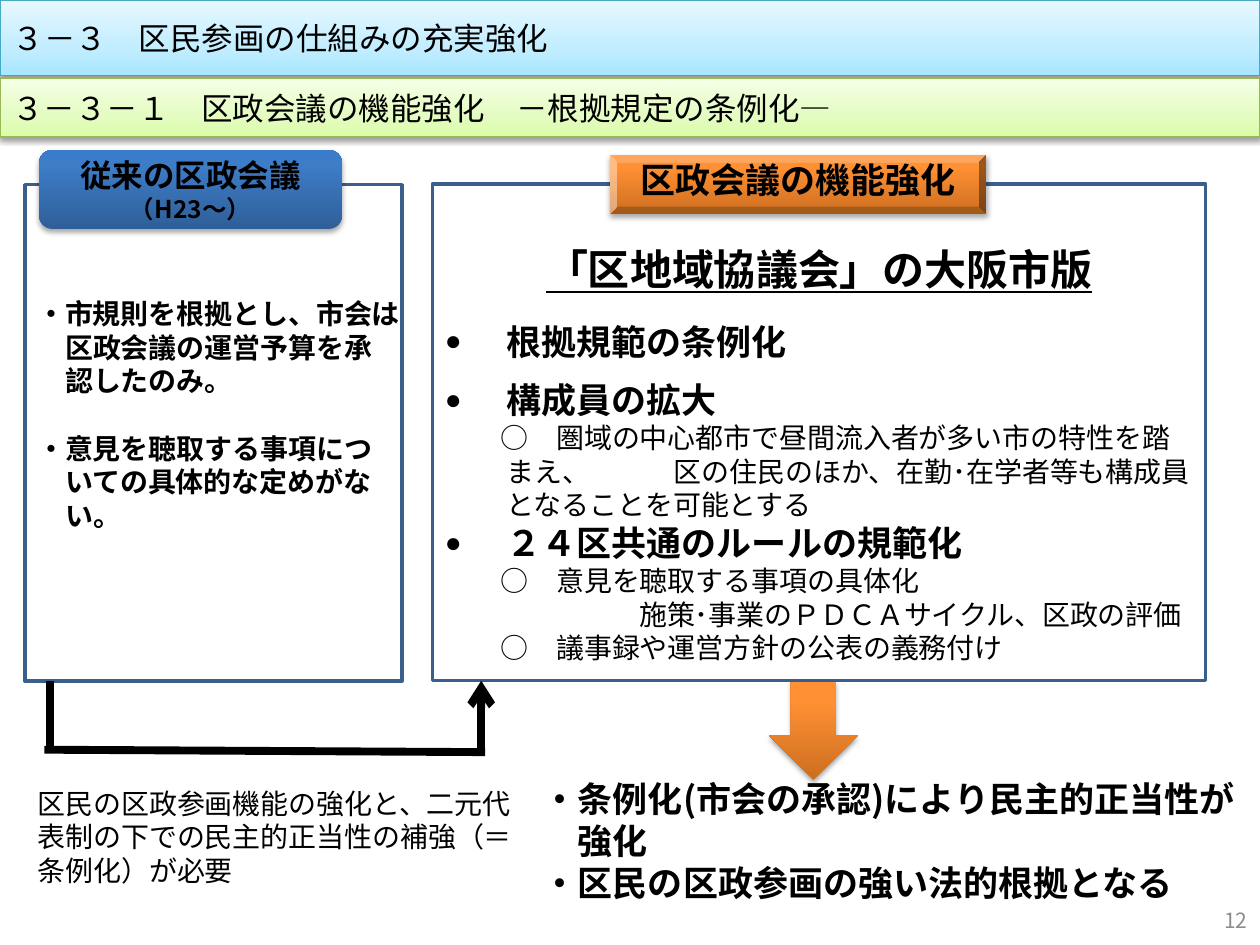
from lxml import etree
from pptx import Presentation
from pptx.dml.color import RGBColor
from pptx.enum.shapes import MSO_CONNECTOR, MSO_SHAPE
from pptx.enum.text import MSO_ANCHOR, MSO_AUTO_SIZE, PP_ALIGN
from pptx.oxml.ns import qn
from pptx.util import Pt

COLORS = {
    "text": "000000", "white": "FFFFFF", "number": "8C8C8C", "frame": "3A5F8C",
    "sky_line": "46AAC5", "lime_line": "98B955",
}
GRADIENTS = {
    "sky": [(0, "A7E6FF"), (35, "C1EDFF"), (100, "E7F8FF")],
    "lime": [(0, "DAFDA7"), (35, "E4FCC2"), (100, "F5FFE7")],
    "blue": [(0, "2F5F99"), (80, "3D7CC7"), (100, "3A7CCB")],
    "orange": [(0, "CC6E20"), (80, "FF9034"), (100, "FF9136")],
}
CJK = "Noto Sans CJK JP"


def rgb(name):
    return RGBColor.from_string(COLORS[name])


def child(parent, tag, **attrs):
    return etree.SubElement(parent, qn(tag), {k: str(v) for k, v in attrs.items()})


def place(sp, box):
    for name, value in zip(("left", "top", "width", "height"), box):
        setattr(sp, name, Pt(value))


def add_shape(s, kind, box):
    sp = s.shapes.add_shape(kind, *map(Pt, box))
    sp.shadow.inherit = False
    return sp


def set_line(sp, color=None, width=1):
    if color:
        sp.line.color.rgb = rgb(color)
        sp.line.width = Pt(width)
    else:
        sp.line.fill.background()


def paint(sp, gradient, line=None, alpha=35, distance=1.8):
    sp.fill.gradient()
    sp.fill.gradient_angle = 90
    spPr = sp._element.spPr
    stops = spPr.find(".//" + qn("a:gsLst"))
    for stop in list(stops):
        stops.remove(stop)
    for pos, color in GRADIENTS[gradient]:
        child(child(stops, "a:gs", pos=pos * 1000), "a:srgbClr", val=color)
    set_line(sp, line, 0.75)
    sp.shadow.inherit = False
    shadow = child(spPr.find(qn("a:effectLst")), "a:outerShdw", blurRad=Pt(3.1),
                   dist=Pt(distance), dir=5400000, rotWithShape=0)
    child(child(shadow, "a:srgbClr", val=COLORS["text"]), "a:alpha", val=alpha * 1000)


def frame_text(sp, anchor=MSO_ANCHOR.TOP, **margins):
    tf = sp.text_frame
    tf.word_wrap = True
    tf.auto_size = MSO_AUTO_SIZE.NONE
    tf.vertical_anchor = anchor
    for side, value in margins.items():
        setattr(tf, "margin_" + side, Pt(value))
    return tf


def write(tf, text, size, font="Calibri", color="text", bold=False, underline=False,
          align=PP_ALIGN.LEFT, before=0, left=0, first=0, bullet=None):
    p = tf.paragraphs[0]
    if p.runs:
        p = tf.add_paragraph()
    p.text = text
    formats = {"alignment": align, "space_before": Pt(before), "space_after": Pt(0),
               "line_spacing": Pt(size * 1.2)}
    for name, value in formats.items():
        setattr(p, name, value)
    pPr = p._p.get_or_add_pPr()
    pPr.set("marL", str(Pt(left)))
    pPr.set("indent", str(Pt(first)))
    if bullet:
        child(pPr, "a:buSzPct", val=80000)
        child(pPr, "a:buFont", typeface="Arial")
        child(pPr, "a:buChar", char=bullet)
    else:
        child(pPr, "a:buNone")
    for r in p.runs:
        for name, value in {"size": Pt(size), "name": font, "bold": bold,
                            "underline": underline}.items():
            setattr(r.font, name, value)
        r.font.color.rgb = rgb(color)
        if font == CJK:
            child(r._r.get_or_add_rPr(), "a:ea", typeface=font)


def header_band(sp, text, gradient, line):
    paint(sp, gradient, line, 38, 1.6)
    write(frame_text(sp, MSO_ANCHOR.MIDDLE), text, 18)


def outline(sp):
    sp.fill.solid()
    sp.fill.fore_color.rgb = rgb("white")
    set_line(sp, "frame", 2)


def current_panel(s, box):
    x, y, w, h = box
    panel = add_shape(s, MSO_SHAPE.RECTANGLE, box)
    outline(panel)
    tf = frame_text(panel, top=64, right=0)
    for text, before in (
        ("・市規則を根拠とし、市会は\v区政会議の運営予算を承\v認したのみ。", 0),
        ("・意見を聴取する事項につ\vいての具体的な定めがな\vい。", 19.2),
    ):
        write(tf, text, 16, bold=True, before=before, left=16, first=-16)
    label = add_shape(s, MSO_SHAPE.ROUNDED_RECTANGLE, (x + 8.2, y - 20, 173, 45.2))
    paint(label, "blue")
    tf = frame_text(label, MSO_ANCHOR.MIDDLE)
    for text, size in (("従来の区政会議", 18), ("（H23～）", 14)):
        write(tf, text, size, CJK, bold=True, align=PP_ALIGN.CENTER)


def reform_panel(s, panel, box):
    x, y, w, h = box
    place(panel, box)
    outline(panel)
    tf = frame_text(panel, top=34)
    heading = {"size": 20, "bold": True, "left": 35.3, "first": -35.3, "bullet": "●"}
    detail = {"size": 16, "left": 35.3, "first": -3.5}
    write(tf, "「区地域協議会」の大阪市版", 24, bold=True, underline=True,
          align=PP_ALIGN.CENTER)
    write(tf, "根拠規範の条例化", before=15, **heading)
    write(tf, "構成員の拡大", before=9.5, **heading)
    write(tf, "○　圏域の中心都市で昼間流入者が多い市の特性を踏まえ、　　　"
              "区の住民のほか、在勤･在学者等も構成員となることを可能とする", **detail)
    write(tf, "２４区共通のルールの規範化", **heading)
    write(tf, "○　意見を聴取する事項の具体化", **detail)
    write(tf, "施策･事業のＰＤＣＡサイクル、区政の評価", 16, left=111)
    write(tf, "○　議事録や運営方針の公表の義務付け", **detail)
    label = add_shape(s, MSO_SHAPE.BEVEL, (x + 101.5, y - 16.5, 215.3, 33.8))
    paint(label, "orange")
    write(frame_text(label, MSO_ANCHOR.BOTTOM), "区政会議の機能強化", 20, CJK,
          bold=True, align=PP_ALIGN.CENTER)


def flow_arrow(s, box):
    x, y, w, h = box
    right, bottom = x + w, y + h
    segments = [
        (x, y, x, bottom),
        (x - 3.4, bottom, right + 2.2, bottom + 1.4),
        (right, bottom, right, y),
    ]
    for points in segments:
        line = s.shapes.add_connector(MSO_CONNECTOR.STRAIGHT, *map(Pt, points))
        set_line(line, "text", 4.5)
        child(line._element.spPr, "a:effectLst")
    child(line.line._get_or_add_ln(), "a:tailEnd", type="arrow")


def text_box(s, box, lines, size, anchor=MSO_ANCHOR.TOP, **formats):
    tf = frame_text(s.shapes.add_textbox(*map(Pt, box)), anchor)
    for text in lines:
        write(tf, text, size, **formats)


def build_slide(prs):
    s = prs.slides.add_slide(prs.slide_layouts[1])
    title, body = s.placeholders
    place(title, (0, 0, 720, 43.2))
    header_band(title, "３－３　区民参画の仕組みの充実強化", "sky", "sky_line")
    band = add_shape(s, MSO_SHAPE.RECTANGLE, (0, 44.6, 720, 33.8))
    header_band(band, "３－３－１　区政会議の機能強化　－根拠規定の条例化―", "lime", "lime_line")
    current_panel(s, (14.2, 105.6, 215.5, 283.7))
    reform_panel(s, body, (247, 105.1, 442, 283.7))
    flow_arrow(s, (28.8, 389, 246.2, 39.4))
    paint(add_shape(s, MSO_SHAPE.DOWN_ARROW, (439.2, 389.5, 51.1, 56.2)), "orange")
    text_box(s, (14.4, 445.7, 294.5, 65.5),
             ["区民の区政参画機能の強化と、二元代表制の下での民主的正当性の補強（＝条例化）が必要"], 16)
    text_box(s, (303.1, 440.6, 416.9, 80),
             ["・条例化(市会の承認)により民主的正当性が強化",
              "・区民の区政参画の強い法的根拠となる"],
             20, font=CJK, bold=True, left=20, first=-20)
    text_box(s, (552.2, 511.2, 167.8, 28.8), ["12"], 12, MSO_ANCHOR.MIDDLE,
             font=CJK, color="number", align=PP_ALIGN.RIGHT)


def main():
    prs = Presentation()
    prs.slide_width, prs.slide_height = Pt(720), Pt(540)
    build_slide(prs)
    prs.save("out.pptx")


if __name__ == "__main__":
    main()
